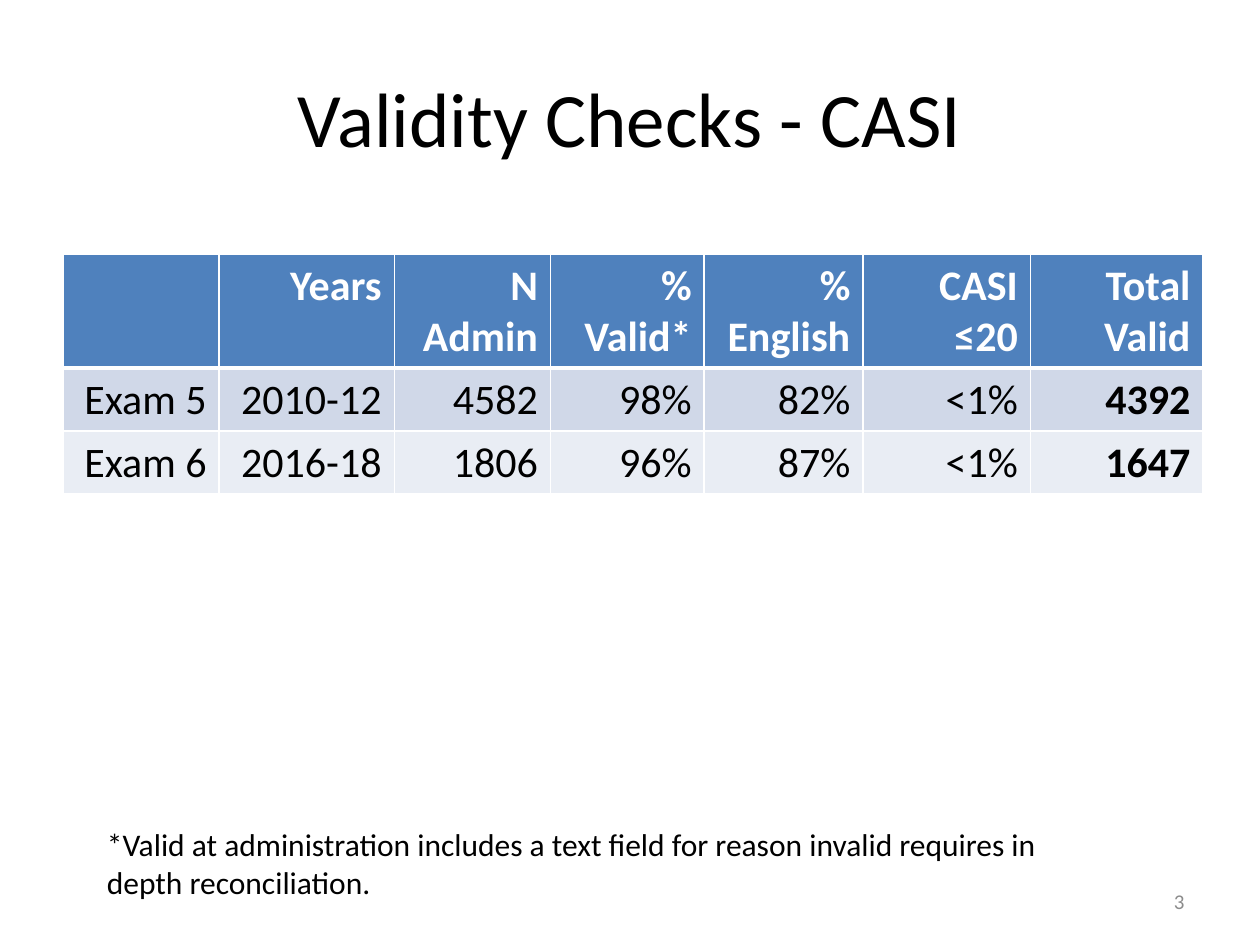
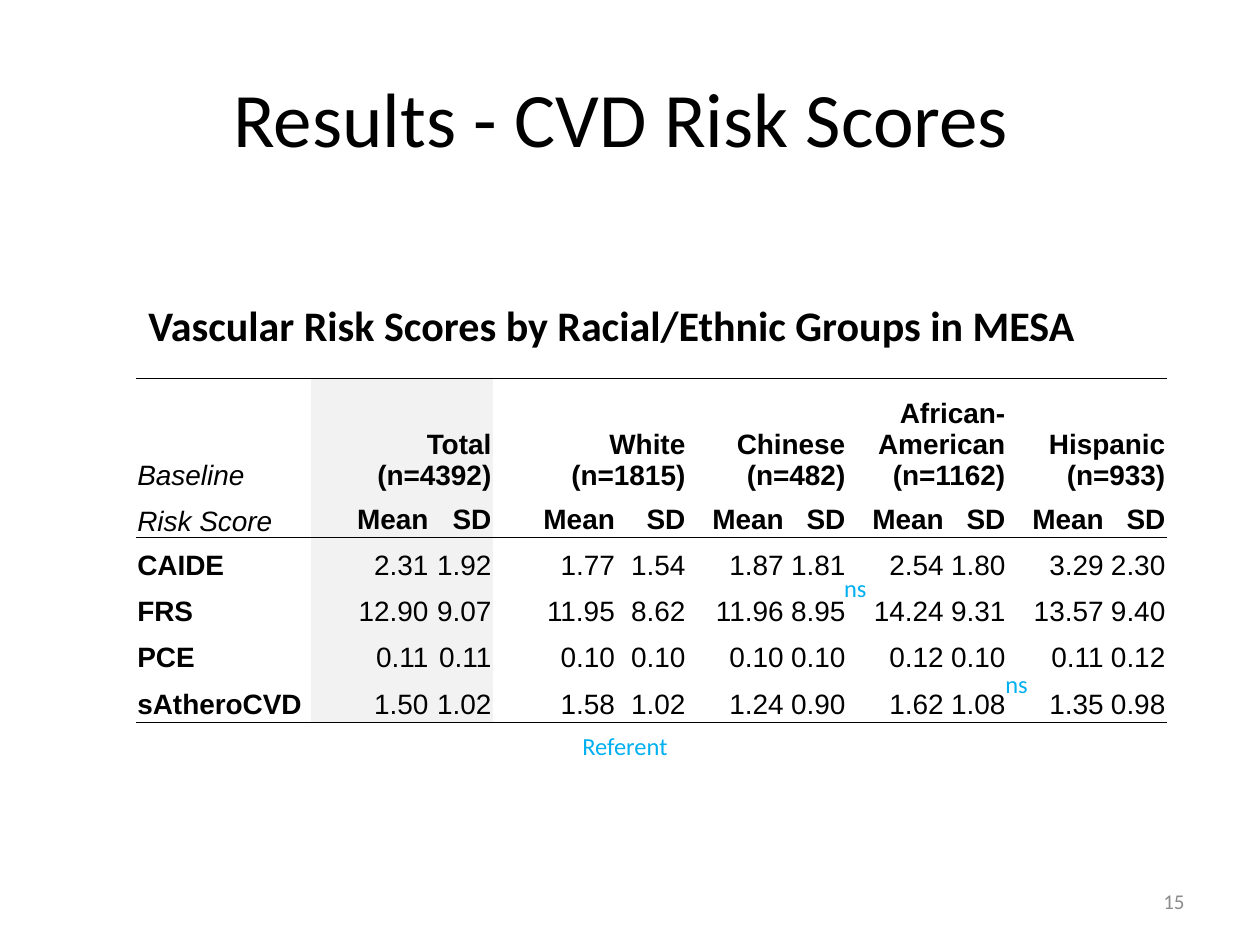
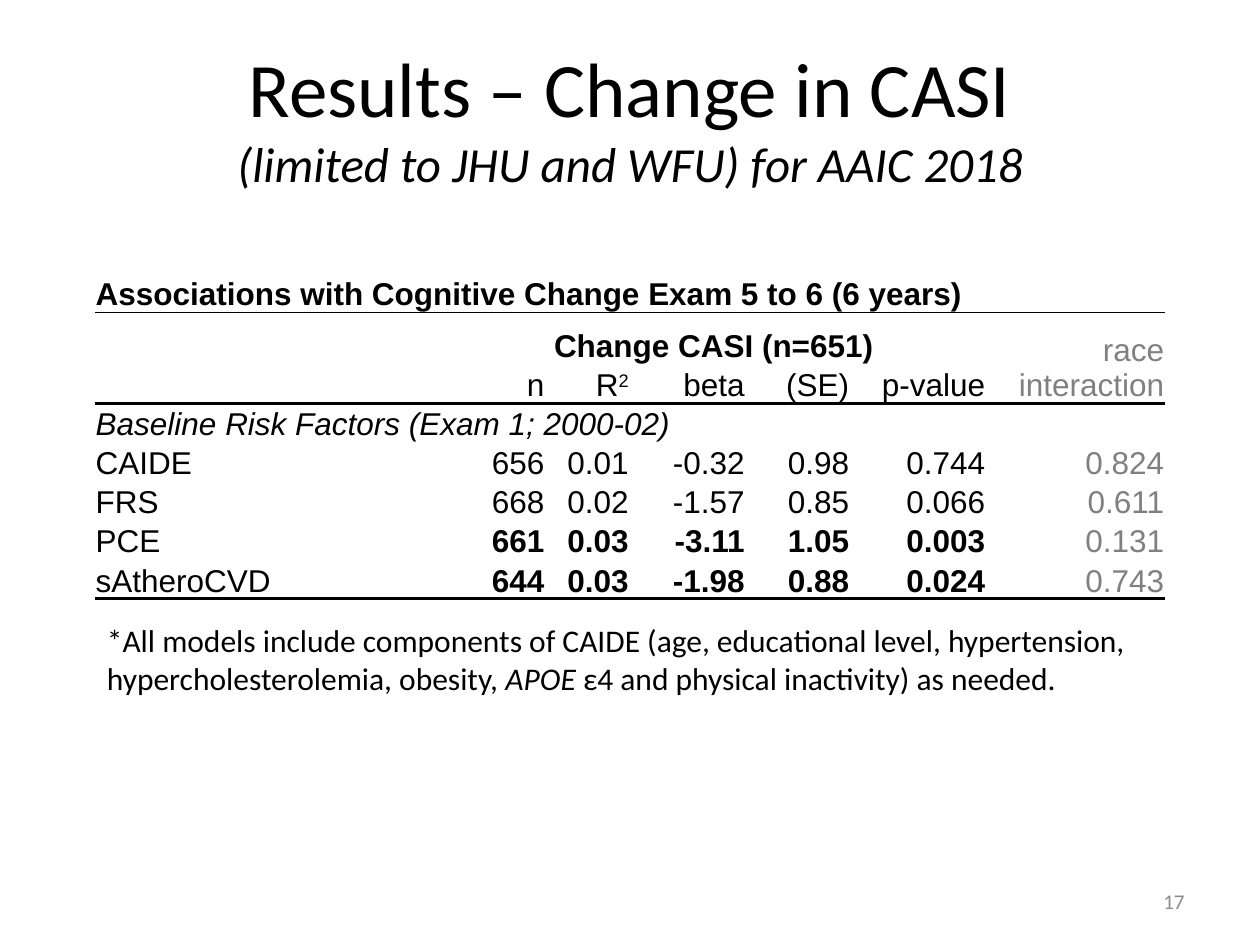
"""Build three slides of cognitive screening and vascular risk results."""
from lxml import etree
from pptx import Presentation
from pptx.dml.color import RGBColor
from pptx.enum import text as t
from pptx.oxml.ns import qn
from pptx.util import Inches, Pt

BLACK = RGBColor(0x00, 0x00, 0x00)
WHITE = RGBColor(0xFF, 0xFF, 0xFF)
GREY = RGBColor(0x80, 0x80, 0x80)
NUMBER_GREY = RGBColor(0x8C, 0x8C, 0x8C)
SHADE = RGBColor(0xF2, 0xF2, 0xF2)
HEADER_BLUE = RGBColor(0x4F, 0x81, 0xBD)
BAND_DARK = RGBColor(0xD0, 0xD8, 0xE8)
BAND_LIGHT = RGBColor(0xE9, 0xED, 0xF4)
CYAN = RGBColor(0x00, 0xB0, 0xF0)

LEFT, CENTER, RIGHT = t.PP_ALIGN.LEFT, t.PP_ALIGN.CENTER, t.PP_ALIGN.RIGHT
TOP, MIDDLE, BOTTOM = t.MSO_ANCHOR.TOP, t.MSO_ANCHOR.MIDDLE, t.MSO_ANCHOR.BOTTOM
PLAIN_TABLE = "{2D5ABB26-0587-4C30-8999-92F81FD0307C}"


def add_span(para, words, size=18, font="Calibri", colour=BLACK, bold=False,
             italic=False, raised=False):
    """Add one formatted run to a paragraph."""
    span = para.add_run()
    span.text = words
    span.font.size = Pt(size)
    span.font.name = font
    span.font.color.rgb = colour
    span.font.bold = bold
    span.font.italic = italic
    if raised:
        span.font._element.set("baseline", "30000")


def write(frame, content, align=LEFT, **look):
    """Fill a text frame from a string or from (words, changes) pairs."""
    para = frame.paragraphs[0]
    para.alignment = align
    if not content:
        etree.SubElement(para._p, qn("a:endParaRPr"), sz="1000")
        return
    pairs = [(content, {})] if isinstance(content, str) else content
    for words, changes in pairs:
        for index, line in enumerate(words.split("\n")):
            if index:
                para.add_line_break()
            if line:
                add_span(para, line, **{**look, **changes})


def place(shape, left, top, width, height):
    """Set the position and size of a shape in inches."""
    shape.left, shape.top = Inches(left), Inches(top)
    shape.width, shape.height = Inches(width), Inches(height)


def add_label(page, area, content, anchor=TOP, **look):
    """Add a wrapping text box."""
    box = page.shapes.add_textbox(*map(Inches, area))
    box.text_frame.word_wrap = True
    box.text_frame.vertical_anchor = anchor
    write(box.text_frame, content, **look)


def add_page(deck, title, number):
    """Add a slide with its title and slide number."""
    page = deck.slides.add_slide(deck.slide_layouts[5])
    heading = page.shapes.title
    place(heading, 0.5, 0.3, 9, 1.25)
    heading.text_frame.vertical_anchor = MIDDLE
    write(heading.text_frame, title, align=CENTER, size=44)
    add_label(page, (7.17, 6.95, 2.33, 0.4), number, anchor=MIDDLE,
              align=RIGHT, size=12, colour=NUMBER_GREY)
    return page


def draw_borders(cell, widths, colour):
    """Draw the sides of a cell, given as left, right, top and bottom points."""
    properties = cell._tc.get_or_add_tcPr()
    for side, width in zip("LRTB", widths):
        line = etree.SubElement(properties, qn(f"a:ln{side}"), w=str(Pt(width)))
        if width:
            fill = etree.SubElement(line, qn("a:solidFill"))
            etree.SubElement(fill, qn("a:srgbClr"), val=str(colour))
        else:
            etree.SubElement(line, qn("a:noFill"))


def add_grid(page, corner, widths, heights, rows, style, merges=(), rules=None,
             upright=0, rule_colour=BLACK, insets=(0.1, 0.05, 0.1, 0.05)):
    """Add a table; style(row, column) gives each cell's fill, anchor and font."""
    area = (*corner, sum(widths), sum(heights))
    frame = page.shapes.add_table(len(heights), len(widths), *map(Inches, area))
    table = frame.table
    table.first_row = table.horz_banding = False
    table._tbl.tblPr.find(qn("a:tableStyleId")).text = PLAIN_TABLE
    for column, width in zip(table.columns, widths):
        column.width = Inches(width)
    for row, height in zip(table.rows, heights):
        row.height = Inches(height)
    for first_row, first_column, last_row, last_column in merges:
        table.cell(first_row, first_column).merge(table.cell(last_row, last_column))
    rules = rules or {}
    for r, row in enumerate(rows):
        for c, content in enumerate(row):
            cell = table.cell(r, c)
            look = style(r, c)
            fill = look.pop("fill", None)
            cell.vertical_anchor = look.pop("anchor", TOP)
            (cell.margin_left, cell.margin_top,
             cell.margin_right, cell.margin_bottom) = map(Inches, insets)
            draw_borders(cell, (upright, upright, rules.get(r, 0),
                                rules.get(r + 1, 0)), rule_colour)
            if fill:
                cell.fill.solid()
                cell.fill.fore_color.rgb = fill
            else:
                cell.fill.background()
            write(cell.text_frame, content, **look)


def validity_style(row, column):
    """Style the validity table: blue header, banded rows, bold totals."""
    return dict(fill=(HEADER_BLUE, BAND_DARK, BAND_LIGHT)[row], align=RIGHT,
                size=24, colour=BLACK if row else WHITE,
                bold=row == 0 or column == 6)


def score_style(row, column):
    """Style the score table: shaded totals, bold headings, italic corner."""
    corner = row < 2 and column == 0
    return dict(fill=SHADE if column in (1, 2) else None, size=16, font="Arial",
                align=RIGHT if column else LEFT, italic=corner,
                bold=not corner and (row < 2 or column == 0),
                anchor=BOTTOM if row == 0 or corner else TOP)


def change_style(row, column):
    """Style the change table: grey interaction, bold significant rows."""
    centred = (row, column) == (1, 1)
    return dict(size=18, font="Arial", anchor=BOTTOM, italic=row == 3,
                align=CENTER if centred else RIGHT if column else LEFT,
                colour=GREY if column == 6 else BLACK,
                bold=row == 0 or centred or (row >= 6 and 0 < column < 6))


def build_validity(deck):
    """Build the slide on validity checks."""
    page = add_page(deck, "Validity Checks - CASI", "3")
    rows = [
        ["", "Years", "N Admin", "% Valid*", "% English", "CASI ≤20", "Total Valid"],
        ["Exam 5", "2010-12", "4582", "98%", "82%", "<1%", "4392"],
        ["Exam 6", "2016-18", "1806", "96%", "87%", "<1%", "1647"],
    ]
    add_grid(page, (0.5, 2.02), [1.24, 1.39, 1.24, 1.22, 1.26, 1.33, 1.37],
             [0.9, 0.5, 0.5], rows, validity_style,
             rules={0: 1, 1: 3, 2: 1, 3: 1}, upright=1, rule_colour=WHITE)
    add_label(page, (0.75, 6.5, 7.75, 0.71),
              "*Valid at administration includes a text field for reason "
              "invalid requires in depth reconciliation.")


def build_scores(deck):
    """Build the slide on risk scores by group."""
    page = add_page(deck, "Results - CVD Risk Scores ", "15")
    groups = ["Total (n=4392)", "White\n(n=1815)", "Chinese (n=482)",
              "African-American (n=1162)", "Hispanic (n=933)"]
    rows = [
        ["Baseline"] + [words for group in groups for words in (group, "")],
        ["Risk Score"] + ["Mean", "SD"] * len(groups),
        "CAIDE 2.31 1.92 1.77 1.54 1.87 1.81 2.54 1.80 3.29 2.30".split(),
        "FRS 12.90 9.07 11.95 8.62 11.96 8.95 14.24 9.31 13.57 9.40".split(),
        "PCE 0.11 0.11 0.10 0.10 0.10 0.10 0.12 0.10 0.11 0.12".split(),
        "sAtheroCVD 1.50 1.02 1.58 1.02 1.24 0.90 1.62 1.08 1.35 0.98".split(),
    ]
    add_grid(page, (1.08, 3), [1.39, 0.94, 0.5, 0.98, 0.56] + [0.78, 0.49] * 3,
             [0.8] + [0.25] * 5, rows, score_style,
             merges=[(0, c, 0, c + 1) for c in range(1, 11, 2)],
             rules={0: 0.5, 2: 0.5, 6: 0.5}, insets=(0.01, 0.1, 0.01, 0))
    for left, top in ((7.88, 5.26), (6.6, 4.5)):
        add_label(page, (left, top, 0.42, 0.34), "ns", size=14, colour=CYAN)
    add_label(page, (4.42, 5.75, 1.08, 0.34), "Referent", align=CENTER,
              size=14, colour=CYAN)
    add_label(page, (1.08, 2.33, 8.17, 0.5),
              "Vascular Risk Scores by Racial/Ethnic Groups in MESA",
              size=24, bold=True)


def build_change(deck):
    """Build the slide on change between exams."""
    title = [("Results – Change in CASI\n", {}),
             ("(limited to JHU and WFU) for AAIC 2018", dict(size=28, italic=True))]
    page = add_page(deck, title, "17")
    r_squared = [("R", {}), ("2", dict(raised=True))]
    rows = [
        ["Associations with Cognitive Change Exam 5 to 6 (6 years)"] + [""] * 6,
        ["", "Change CASI (n=651)", "", "", "", "", "race interaction"],
        ["", "n", r_squared, "beta", "(SE)", "p-value", ""],
        ["Baseline Risk Factors (Exam 1; 2000-02)"] + [""] * 6,
        "CAIDE 656 0.01 -0.32 0.98 0.744 0.824".split(),
        "FRS 668 0.02 -1.57 0.85 0.066 0.611".split(),
        "PCE 661 0.03 -3.11 1.05 0.003 0.131".split(),
        "sAtheroCVD 644 0.03 -1.98 0.88 0.024 0.743".split(),
    ]
    add_grid(page, (0.75, 2.17), [2.75, 0.83, 0.67, 0.92, 0.83, 1.08, 1.42],
             [0.21, 0.41] + [0.21] * 6, rows, change_style,
             merges=[(0, 0, 0, 6), (1, 1, 1, 5), (1, 6, 2, 6), (3, 0, 3, 5)],
             rules={1: 0.5, 3: 2, 8: 2}, insets=(0.01, 0.01, 0.01, 0))
    add_label(page, (0.75, 4.88, 8.5, 1.01), [
        ("*All models include components of CAIDE (age, educational level, "
         "hypertension, hypercholesterolemia, obesity, ", {}),
        ("APOE", dict(italic=True)),
        (" ε4 and physical inactivity) as needed.", {})])


def main():
    """Build and save the deck."""
    deck = Presentation()
    deck.slide_width, deck.slide_height = Inches(10), Inches(7.5)
    for build in (build_validity, build_scores, build_change):
        build(deck)
    deck.save("out.pptx")


if __name__ == "__main__":
    main()
